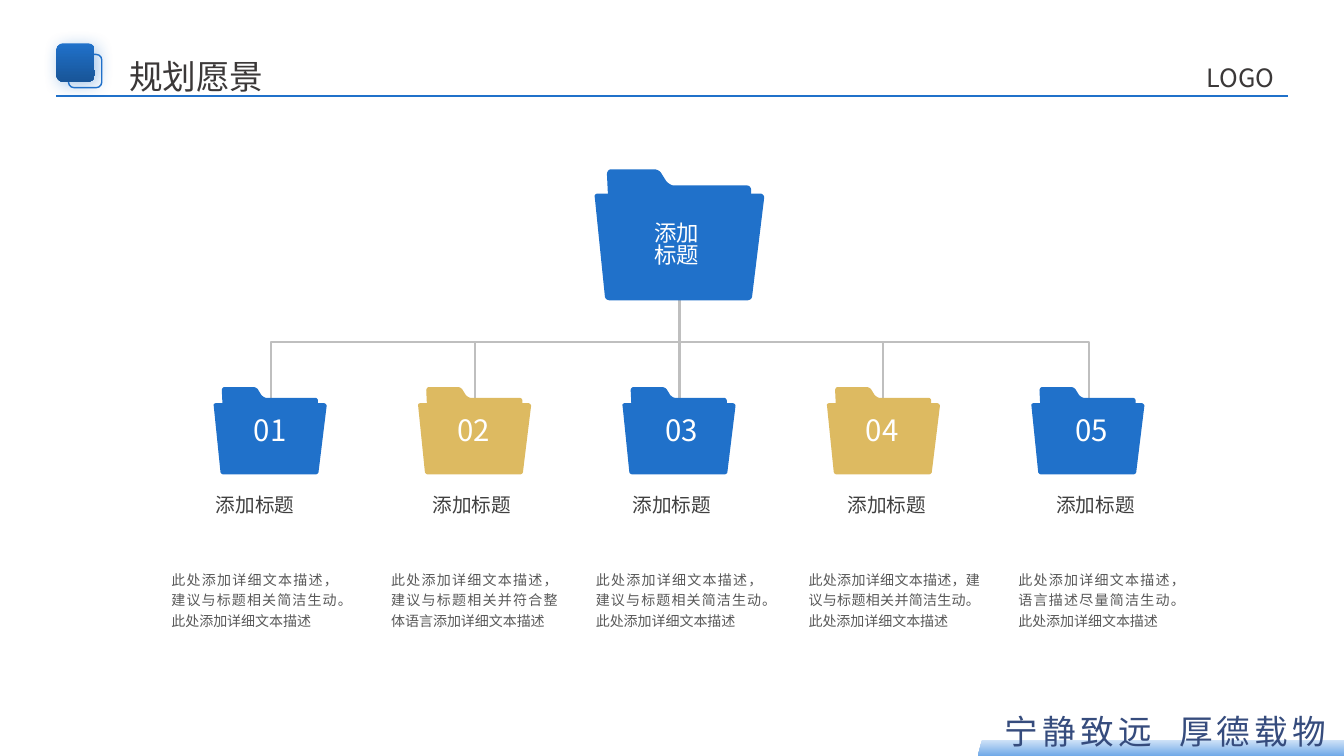
from lxml.etree import SubElement
from pptx import Presentation
from pptx.dml.color import RGBColor
from pptx.enum.shapes import MSO_CONNECTOR, MSO_SHAPE
from pptx.enum.text import MSO_ANCHOR, PP_ALIGN
from pptx.oxml.ns import qn
from pptx.util import Pt

PX = 9144
FONT = "Noto Sans CJK SC"
BLUE = RGBColor(0x20, 0x71, 0xCA)
NAVY = RGBColor(0x18, 0x55, 0x98)
GOLD = RGBColor(0xDD, 0xBA, 0x61)
GREY = RGBColor(0xBF, 0xBF, 0xBF)
PALE = RGBColor(0xCF, 0xE2, 0xF7)
SKY = RGBColor(0x70, 0xA9, 0xE8)
MOTTO = RGBColor(0x36, 0x4C, 0x7D)
DARK = RGBColor(0x3B, 0x38, 0x38)
HEAD = RGBColor(0x40, 0x40, 0x40)
BODY = RGBColor(0x59, 0x59, 0x59)
WHITE = RGBColor(0xFF, 0xFF, 0xFF)

FLAP = [(155, 25), (155, 20), (155, 18, 153, 16, 151, 16), (78, 16),
        (76, 16, 73, 14, 71, 12), (66, 4), (65, 2, 62, 0, 59, 0), (16, 0),
        (14, 0, 12, 2, 12, 5), (13, 25)]
FRONT = [(156, 126), (156, 128, 154, 130, 151, 130), (15, 130),
         (12, 130, 10, 128, 10, 126), (0, 28), (-1, 26, 1, 24, 3, 24),
         (164, 24), (166, 24, 168, 26, 168, 28)]

LEAD = "此处添加详细文本描述，"
TAIL = "此处添加详细文本描述"
ITEMS = [
    (BLUE, 208, (128, 250), (162, 181), LEAD + "建议与标题相关简洁生动。" + TAIL),
    (GOLD, 410, (378, 180), (380, 181), LEAD + "建议与标题相关并符合整体语言添加详细文本描述"),
    (BLUE, 616, (576, 181), (583, 181), LEAD + "建议与标题相关简洁生动。" + TAIL),
    (GOLD, 815, (780, 199), (794, 186), LEAD + "建议与标题相关并简洁生动。" + TAIL),
    (BLUE, 1023, (998, 177), (1002, 181), LEAD + "语言描述尽量简洁生动。" + TAIL),
]


def add_text(slide, box, text, size, color, align=PP_ALIGN.CENTER, pad=(0, 0), lead=None, gap=0):
    """Add a one-paragraph text box."""
    frame = slide.shapes.add_textbox(*(n * PX for n in box)).text_frame
    frame.word_wrap = True
    frame.vertical_anchor = MSO_ANCHOR.MIDDLE
    frame.margin_left = frame.margin_right = pad[0] * PX
    frame.margin_top = frame.margin_bottom = pad[1] * PX
    para = frame.paragraphs[0]
    para.alignment = align
    if lead:
        para.line_spacing = lead
    run = para.add_run()
    run.text = text
    run.font.size = Pt(size)
    run.font.name = FONT
    run.font.color.rgb = color
    props = run.font._element
    SubElement(props, qn("a:ea")).set("typeface", FONT)
    if gap:
        props.set("spc", str(gap * 100))


def add_line(slide, start, end, color):
    """Add a straight line."""
    line = slide.shapes.add_connector(MSO_CONNECTOR.STRAIGHT, *(n * PX for n in start + end))
    line.line.color.rgb = color
    line.line.width = Pt(1.5)
    SubElement(line._element.spPr, qn("a:effectLst"))


def add_block(slide, kind, box, shades=None):
    """Add a preset shape, shaded downwards or only outlined."""
    shape = slide.shapes.add_shape(kind, *(n * PX for n in box))
    shape.shadow.inherit = False
    if shades:
        shape.fill.gradient()
        shape.fill.gradient_angle = 270
        for stop, place, color in zip(shape.fill.gradient_stops, (0, 1), shades):
            stop.position = place
            stop.color.rgb = color
        shape.line.fill.background()
    else:
        shape.fill.background()
        shape.line.color.rgb = BLUE
        shape.line.width = Pt(1)
    return shape


def add_glow(shape):
    """Cast a soft blue shadow."""
    effects = shape._element.spPr.find(qn("a:effectLst"))
    cast = SubElement(effects, qn("a:outerShdw"), blurRad=str(Pt(12)), dist=str(Pt(3)),
                      dir=str(45 * 60000), algn="tl", rotWithShape="0")
    tint = SubElement(cast, qn("a:srgbClr"), val=str(BLUE))
    SubElement(tint, qn("a:alpha"), val="40000")


def trace(steps):
    """Turn corner and curve steps into points."""
    points = []
    for step in steps:
        if len(step) == 2:
            points.append(step)
            continue
        knots = [points[-1], step[:2], step[2:4], step[4:]]
        for part in range(1, 7):
            t = part / 6
            mix = ((1 - t) ** 3, 3 * t * (1 - t) ** 2, 3 * t * t * (1 - t), t ** 3)
            points.append(tuple(sum(m * k[i] for m, k in zip(mix, knots)) for i in (0, 1)))
    return points


def add_path(slide, points, closed):
    """Add a freeform through points given in px."""
    first, *rest = [(round(x * PX), round(y * PX)) for x, y in points]
    pen = slide.shapes.build_freeform(*first, scale=1.0)
    pen.add_line_segments(rest, close=closed)
    shape = pen.convert_to_shape()
    shape.shadow.inherit = False
    return shape


def add_folder(slide, left, top, ratio, color):
    """Add a folder of a flap and a front."""
    for steps in (FLAP, FRONT):
        points = [(left + x * ratio, top + y * ratio) for x, y in trace(steps)]
        shape = add_path(slide, points, True)
        shape.fill.solid()
        shape.fill.fore_color.rgb = color
        shape.line.fill.background()


def add_frame(slide):
    """Add the heading, rule and motto."""
    add_line(slide, (1277, 95), (56, 95), BLUE)
    add_block(slide, MSO_SHAPE.ROUNDED_RECTANGLE, (68, 54, 33, 33))
    add_glow(add_block(slide, MSO_SHAPE.ROUNDED_RECTANGLE, (56, 43, 38, 38), (BLUE, NAVY)))
    add_block(slide, MSO_SHAPE.PARALLELOGRAM, (970, 734, 415, 16), (PALE, SKY))
    for left, text in ((955, "宁静致远"), (1128, "厚德载物")):
        add_text(slide, (left, 700, 229, 50), text, 24, MOTTO, pad=(10, 5), gap=3)
    add_text(slide, (1197, 62, 80, 30), "LOGO", 18, DARK, PP_ALIGN.JUSTIFY)
    add_text(slide, (128, 55, 148, 40), "规划愿景", 24, DARK, PP_ALIGN.JUSTIFY)


def add_tree(slide):
    """Add the branch lines and the top folder."""
    rail = add_path(slide, [(269, 408), (269, 339), (1080, 339), (1080, 408)], False)
    rail.fill.background()
    rail.line.color.rgb = GREY
    rail.line.width = Pt(1.5)
    for x, top in ((674, 297), (471, 339), (876, 339)):
        add_line(slide, (x, top), (x, 408), GREY)
    add_folder(slide, 590, 168, 1, BLUE)
    add_text(slide, (641, 214, 60, 60), "添加标题", 16, WHITE, lead=0.83)


def add_item(slide, index, item):
    """Add one small folder with its number, title and details."""
    color, left, (head, wide), (note, span), text = item
    add_folder(slide, 212 + index * 202.75, 384, 2 / 3, color)
    add_text(slide, (left, 405, 120, 43), f"{index + 1:02}", 21, WHITE, pad=(8, 4))
    add_text(slide, (head, 489, wide, 24), "添加标题", 14, HEAD)
    add_text(slide, (note, 552, span, 83), text, 10, BODY, PP_ALIGN.JUSTIFY, (8, 4), 1.22)


def main():
    """Build and save the slide."""
    deck = Presentation()
    deck.slide_width, deck.slide_height = 1333 * PX, 750 * PX
    slide = deck.slides.add_slide(deck.slide_layouts[6])
    add_frame(slide)
    add_tree(slide)
    for index, item in enumerate(ITEMS):
        add_item(slide, index, item)
    deck.save("out.pptx")


if __name__ == "__main__":
    main()
